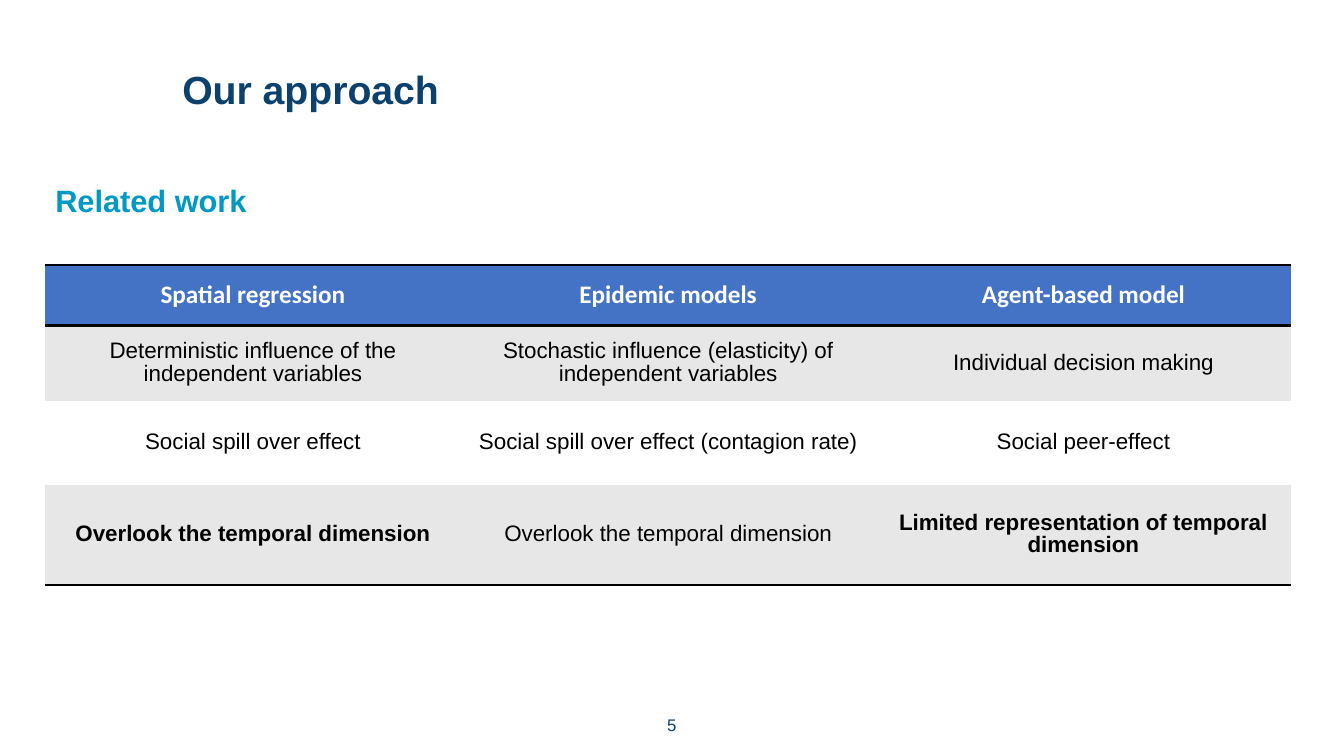
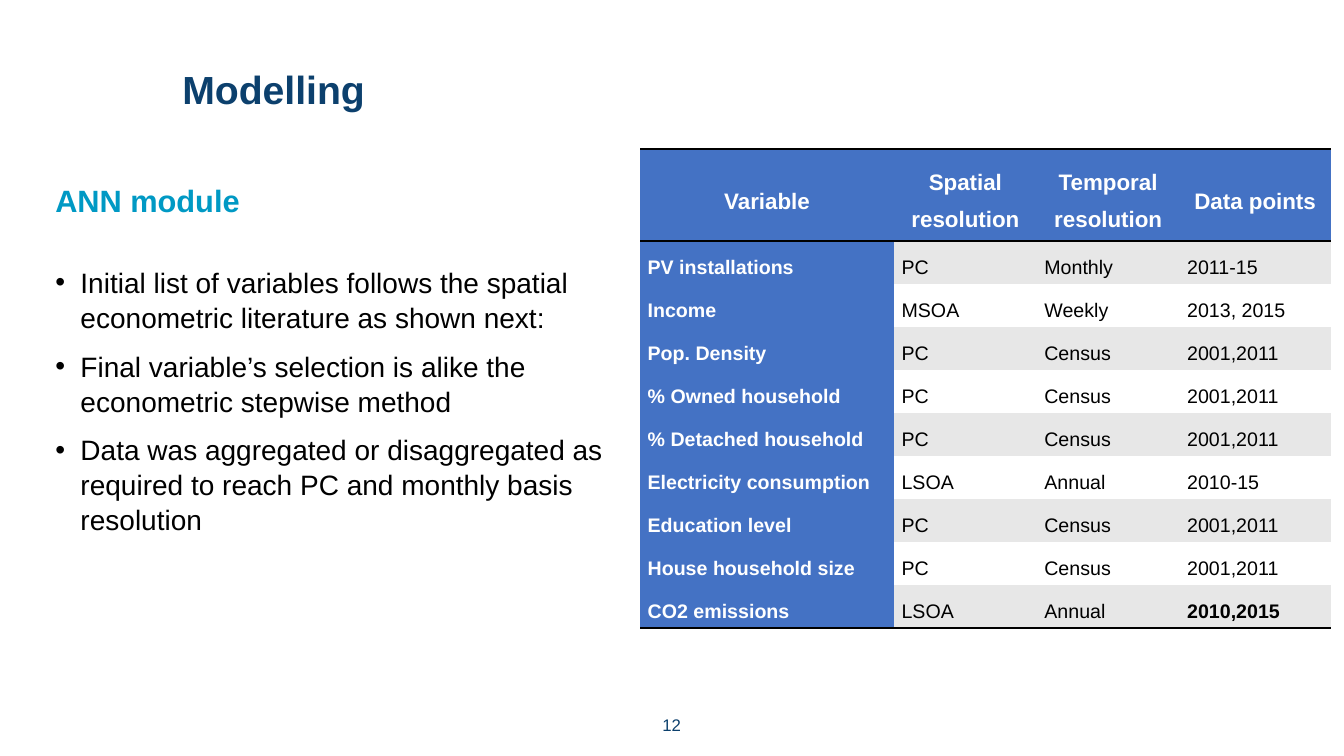
from lxml import etree
from pptx import Presentation
from pptx.dml.color import RGBColor
from pptx.enum.text import MSO_ANCHOR, PP_ALIGN
from pptx.oxml.ns import qn
from pptx.util import Pt

LEFT, CENTER = PP_ALIGN.LEFT, PP_ALIGN.CENTER
TOP, MIDDLE = MSO_ANCHOR.TOP, MSO_ANCHOR.MIDDLE
COLORS = {"navy": "0C406D", "cyan": "0099C4", "blue": "4472C4",
          "gray": "E7E7E7", "white": "FFFFFF", "black": "000000"}
PLAIN_TABLE_STYLE = "{2D5ABB26-0587-4C30-8999-92F81FD0307C}"
MARGIN = 32.4

# Contents
pages = [("Our approach", "Related work", "5"),
         ("Modelling", "ANN module", "12")]
related_work = [
    ["Spatial regression", "Epidemic models", "Agent-based model"],
    ["Deterministic influence of the independent variables",
     "Stochastic influence (elasticity) of independent variables",
     "Individual decision making"],
    ["Social spill over effect", "Social spill over effect (contagion rate)",
     "Social peer-effect"],
    ["Overlook the temporal dimension", "Overlook the temporal dimension",
     "Limited representation of temporal dimension"],
]
bullets = [
    "Initial list of variables follows the spatial econometric literature as shown next:",
    "Final variable’s selection is alike the econometric stepwise method",
    "Data was aggregated or disaggregated as required to reach PC and monthly basis resolution",
]
variables = [
    ["Variable", "Spatial resolution", "Temporal resolution", "Data points"],
    ["PV installations", "PC", "Monthly", "2011-15"],
    ["Income", "MSOA", "Weekly", "2013, 2015"],
    ["Pop. Density", "PC", "Census", "2001,2011"],
    ["% Owned household", "PC", "Census", "2001,2011"],
    ["% Detached household", "PC", "Census", "2001,2011"],
    ["Electricity consumption", "LSOA", "Annual", "2010-15"],
    ["Education level", "PC", "Census", "2001,2011"],
    ["House household size", "PC", "Census", "2001,2011"],
    ["CO2 emissions", "LSOA", "Annual", "2010,2015"],
]


def write(frame, text, size, color, bold=False, align=LEFT, spacing=1.0, font="Arial"):
    """Fill the first paragraph of a text frame."""
    para = frame.paragraphs[0]
    para.text = text
    para.alignment = align
    para.line_spacing = spacing
    para.font.name = font
    para.font.size = Pt(size)
    para.font.bold = bold
    para.font.color.rgb = RGBColor.from_string(COLORS[color])


def add_table(page, left, top, widths, heights, rows):
    """Add a striped table with black rules round the header and at the foot."""
    table = page.shapes.add_table(len(rows), len(widths), Pt(left), Pt(top),
                                  Pt(sum(widths)), Pt(sum(heights))).table
    table.horz_banding = False
    table._tbl.tblPr.find(qn("a:tableStyleId")).text = PLAIN_TABLE_STYLE
    for column, width in zip(table.columns, widths):
        column.width = Pt(width)
    for number, (row, height) in enumerate(zip(table.rows, heights)):
        row.height = Pt(height)
        rules = {0: ["lnT", "lnB"], len(rows) - 1: ["lnB"]}.get(number, [])
        for cell in row.cells:
            cell.vertical_anchor = MIDDLE
            fill = "blue" if number == 0 else "gray" if number % 2 else "white"
            cell.fill.solid()
            cell.fill.fore_color.rgb = RGBColor.from_string(COLORS[fill])
            for place, tag in enumerate(rules):
                line = etree.Element(qn("a:" + tag), w=str(Pt(2)))
                solid = etree.SubElement(line, qn("a:solidFill"))
                etree.SubElement(solid, qn("a:srgbClr"), val=COLORS["black"])
                cell._tc.get_or_add_tcPr().insert(place, line)
    return table


deck = Presentation()
deck.slide_width, deck.slide_height = Pt(960), Pt(540)

# Title, subtitle and page number on every page
for title, subtitle, page_number in pages:
    page = deck.slides.add_slide(deck.slide_layouts[6])
    for place, style in [
        ((123.1, 31.7, 805, 67.7), (title, 28, "navy", True, LEFT, 0.9)),
        ((MARGIN, 111.6, 527, 62.6), (subtitle, 22, "cyan", True)),
        ((460, 504.7, 39.6, 26), (page_number, 12, "navy", False, CENTER)),
    ]:
        box = page.shapes.add_textbox(*map(Pt, place))
        box.text_frame.word_wrap = True
        box.text_frame.vertical_anchor = MIDDLE
        write(box.text_frame, *style)
approach, modelling = deck.slides

# Related work table
table = add_table(approach, MARGIN, 189.4, [296.6] * 3, [43.2, 54, 59.8, 71.3], related_work)
for row, texts in enumerate(related_work):
    for column, text in enumerate(texts):
        frame = table.cell(row, column).text_frame
        if row == 0:
            write(frame, text, 18, "white", True, CENTER, 0.9, "Calibri")
        else:
            write(frame, text, 16, "black", row == 3 and column != 1, CENTER, 0.9)

# Bullet list
frame = modelling.shapes.add_textbox(Pt(MARGIN), Pt(185), Pt(425.5), Pt(311.8)).text_frame
frame.word_wrap = True
frame.vertical_anchor = TOP
for number, text in enumerate(bullets):
    para = frame.add_paragraph() if number else frame.paragraphs[0]
    para.text = text
    para.line_spacing = 1.04
    if number:
        para.space_before = Pt(10)
    properties = para._p.get_or_add_pPr()
    properties.set("marL", str(Pt(18)))
    properties.set("indent", str(-Pt(18)))
    etree.SubElement(properties, qn("a:buFont"), typeface="Arial")
    etree.SubElement(properties, qn("a:buChar"), char="•")
    para.font.name = "Arial"
    para.font.size = Pt(20)
    para.font.color.rgb = RGBColor.from_string(COLORS["black"])

# Variables table
table = add_table(modelling, 457.2, 106.6, [181.4, 102, 102, 108], [65.5] + [30.7] * 9, variables)
for row, texts in enumerate(variables):
    for column, text in enumerate(texts):
        cell = table.cell(row, column)
        cell.margin_left = cell.margin_right = Pt(5.4)
        cell.margin_top = cell.margin_bottom = Pt(0)
        if row == 0:
            write(cell.text_frame, text, 16, "white", True, CENTER, 1.5)
        elif column == 0:
            cell.fill.fore_color.rgb = RGBColor.from_string(COLORS["blue"])
            write(cell.text_frame, text, 14, "white", True, LEFT, 1.5)
        else:
            write(cell.text_frame, text, 14, "black", text == "2010,2015", LEFT, 1.5)

deck.save("out.pptx")
